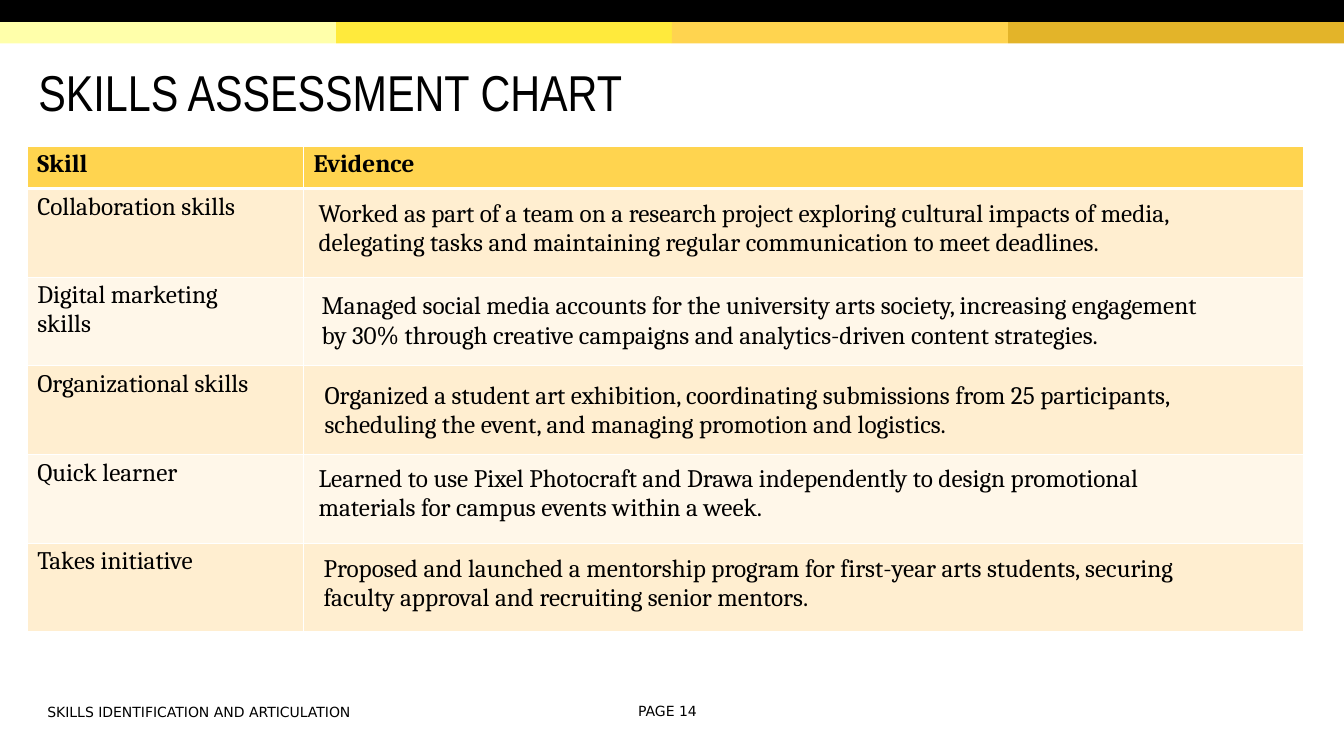
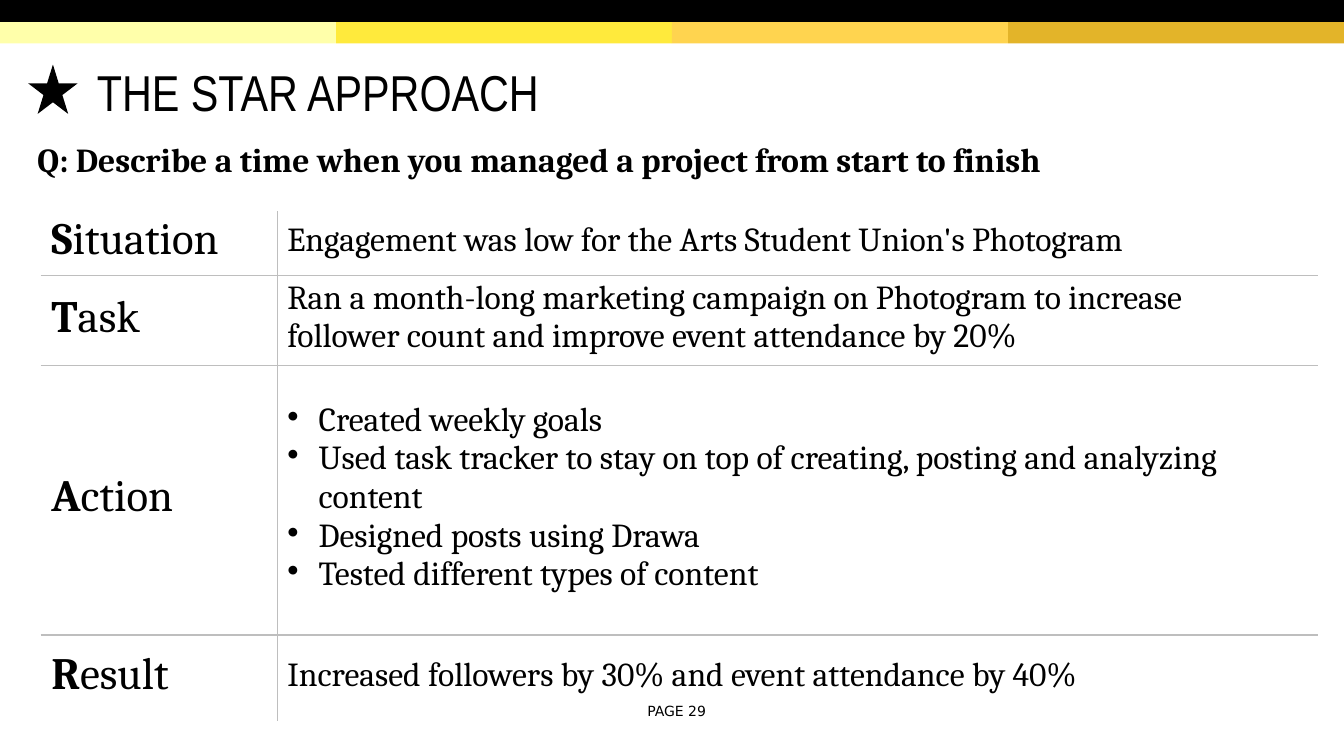
from lxml import etree
from pptx import Presentation
from pptx.dml.color import RGBColor
from pptx.enum.shapes import MSO_SHAPE
from pptx.enum.text import MSO_ANCHOR, MSO_AUTO_SIZE, PP_ALIGN
from pptx.oxml.ns import qn
from pptx.util import Inches, Pt

RECTANGLE = MSO_SHAPE.RECTANGLE
STAR = MSO_SHAPE.STAR_5_POINT
TOP, MIDDLE = MSO_ANCHOR.TOP, MSO_ANCHOR.MIDDLE
LEFT = PP_ALIGN.LEFT
NO_AUTOSIZE = MSO_AUTO_SIZE.NONE

BLACK = RGBColor(0x00, 0x00, 0x00)
WHITE = RGBColor(0xFF, 0xFF, 0xFF)
RULE_GREY = RGBColor(0xBE, 0xBE, 0xBE)
GOLD = RGBColor(0xFF, 0xD4, 0x4F)
ROW_TINTS = (RGBColor(0xFF, 0xEE, 0xD0), RGBColor(0xFF, 0xF7, 0xE9))
BAND_COLORS = (RGBColor(0xFF, 0xFF, 0xAA), RGBColor(0xFF, 0xEA, 0x3C),
               GOLD, RGBColor(0xE3, 0xB4, 0x29))

TITLE_FONT, BODY_FONT, FOOTER_FONT = "Arial Narrow", "Cambria", "DejaVu Sans"
PAGE_WIDTH, PAGE_HEIGHT = 13.33, 7.5
BAND_HEIGHT = 0.22
TITLE_BOX = (0.37, 0.6, 8.75, 0.63)
TITLE_ONLY_LAYOUT = 5

# Skill, evidence, then the evidence cell's left and top margins
SKILLS = [
    ("Collaboration skills",
     "Worked as part of a team on a research project exploring cultural "
     "impacts of media, delegating tasks and maintaining regular "
     "communication to meet deadlines.", 0.15, 0.11),
    ("Digital marketing skills",
     "Managed social media accounts for the university arts society, "
     "increasing engagement by 30% through creative campaigns and "
     "analytics-driven content strategies.", 0.18, 0.15),
    ("Organizational skills",
     "Organized a student art exhibition, coordinating submissions from 25 "
     "participants, scheduling the event, and managing promotion and "
     "logistics.", 0.21, 0.16),
    ("Quick learner",
     "Learned to use Pixel Photocraft and Drawa independently to design "
     "promotional materials for campus events within a week.", 0.15, 0.1),
    ("Takes initiative",
     "Proposed and launched a mentorship program for first-year arts "
     "students, securing faculty approval and recruiting senior mentors.",
     0.2, 0.11),
]

# Step, its lines, row height
STAR_STEPS = [
    ("Situation",
     ["Engagement was low for the Arts Student Union's Photogram"], 0.63),
    ("Task",
     ["Ran a month-long marketing campaign on Photogram to increase "
      "follower count and improve event attendance by 20%"], 0.9),
    ("Action",
     ["Created weekly goals",
      "Used task tracker to stay on top of creating, posting and analyzing "
      "content",
      "Designed posts using Drawa",
      "Tested different types of content"], 2.67),
    ("Result",
     ["Increased followers by 30% and event attendance by 40%"], 0.86),
]


def inches(box):
    return [Inches(length) for length in box]


def format_runs(para, font_name, size, bold=False):
    for run in para.runs:
        run.font.name = font_name
        run.font.size = Pt(size)
        run.font.bold = bold
        run.font.color.rgb = BLACK


def set_margins(holder, left=0, top=0, right=0, bottom=0):
    """Set the inner margins, in inches, of a text frame or a cell."""
    holder.margin_left, holder.margin_top = Inches(left), Inches(top)
    holder.margin_right, holder.margin_bottom = Inches(right), Inches(bottom)


def add_solid(page, shape_kind, box, color):
    shape = page.shapes.add_shape(shape_kind, *inches(box))
    shape.shadow.inherit = False
    shape.fill.solid()
    shape.fill.fore_color.rgb = color
    shape.line.fill.background()


def add_label(page, box, text, font_name, size, bold=False):
    frame = page.shapes.add_textbox(*inches(box)).text_frame
    frame.word_wrap = True
    set_margins(frame, top=0.01)
    frame.text = text
    format_runs(frame.paragraphs[0], font_name, size, bold)


def add_band(page):
    add_solid(page, RECTANGLE, (0, 0, PAGE_WIDTH, BAND_HEIGHT), BLACK)
    width = PAGE_WIDTH / len(BAND_COLORS)
    for index, color in enumerate(BAND_COLORS):
        box = (index * width, BAND_HEIGHT, width, BAND_HEIGHT - 0.01)
        add_solid(page, RECTANGLE, box, color)


def set_title(page, text, indent):
    title = page.shapes.title
    title.left, title.top, title.width, title.height = inches(TITLE_BOX)
    frame = title.text_frame
    frame.auto_size = NO_AUTOSIZE
    frame.vertical_anchor = TOP
    set_margins(frame, left=indent, top=0.01)
    frame.text = text
    frame.paragraphs[0].alignment = LEFT
    format_runs(frame.paragraphs[0], TITLE_FONT, 36)


def add_page(deck, title, page_number, number_left, title_indent=0.01):
    """Add a slide with the band, title and page number all slides share."""
    page = deck.slides.add_slide(deck.slide_layouts[TITLE_ONLY_LAYOUT])
    add_band(page)
    set_title(page, title, title_indent)
    add_label(page, (number_left, 6.96, 0.8, 0.2), f"PAGE {page_number}",
              FOOTER_FONT, 10)
    return page


def add_plain_table(page, left, top, widths, heights):
    box = (left, top, sum(widths), sum(heights))
    frame = page.shapes.add_table(len(heights), len(widths), *inches(box))
    table = frame.table
    table.first_row = table.horz_banding = False
    for column, width in zip(table.columns, widths):
        column.width = Inches(width)
    for row, height in zip(table.rows, heights):
        row.height = Inches(height)
    return table


def set_borders(cell, left, right, top, bottom):
    """Draw the four sides, each given as (colour, points)."""
    properties = cell._tc.get_or_add_tcPr()
    sides = zip(("a:lnL", "a:lnR", "a:lnT", "a:lnB"),
                (left, right, top, bottom))
    for index, (tag, (color, points)) in enumerate(sides):
        line = etree.Element(qn(tag), w=str(Pt(points)))
        fill = etree.SubElement(line, qn("a:solidFill"))
        etree.SubElement(fill, qn("a:srgbClr"), val=str(color))
        properties.insert(index, line)


def set_bullet(para, hanging):
    properties = para._p.get_or_add_pPr()
    properties.set("marL", str(Inches(hanging)))
    properties.set("indent", str(-Inches(hanging)))
    etree.SubElement(properties, qn("a:buChar"), char="•")


def fill_skill_row(table, row, texts, color):
    thin, thick = (WHITE, 1), (WHITE, 3)
    for column, text in enumerate(texts):
        cell = table.cell(row, column)
        cell.text = text
        format_runs(cell.text_frame.paragraphs[0], BODY_FONT, 18, row == 0)
        set_margins(cell, left=0.1, top=0.04, right=0.4)
        set_borders(cell, thin, thin, thick if row == 1 else thin,
                    thick if row == 0 else thin)
        cell.fill.solid()
        cell.fill.fore_color.rgb = color


def add_skills_table(page, left, top):
    heights = [0.42] + [0.88] * len(SKILLS)
    table = add_plain_table(page, left, top, (2.74, 9.92), heights)
    fill_skill_row(table, 0, ("Skill", "Evidence"), GOLD)
    for row, (skill, evidence, indent, drop) in enumerate(SKILLS, 1):
        fill_skill_row(table, row, (skill, evidence), ROW_TINTS[(row - 1) % 2])
        set_margins(table.cell(row, 1), left=indent, top=drop, right=0.9)


def write_step(cell, step):
    """Write the step's name with its first letter in bold."""
    para = cell.text_frame.paragraphs[0]
    for part in (step[0], step[1:]):
        para.add_run().text = part
    format_runs(para, BODY_FONT, 32)
    para.runs[0].font.bold = True


def write_lines(cell, lines):
    frame = cell.text_frame
    frame.text = "\n".join(lines)
    for para in frame.paragraphs:
        if len(lines) > 1:
            set_bullet(para, 0.31)
        format_runs(para, BODY_FONT, 24)


def add_star_table(page, left, top):
    heights = [height for _, _, height in STAR_STEPS]
    table = add_plain_table(page, left, top, (2.34, 10.32), heights)
    rule, edge = (RULE_GREY, 1), (WHITE, 1)
    last = len(STAR_STEPS) - 1
    for row, (step, lines, _) in enumerate(STAR_STEPS):
        step_cell, lines_cell = table.cell(row, 0), table.cell(row, 1)
        write_step(step_cell, step)
        write_lines(lines_cell, lines)
        above, below = (edge if row == 0 else rule,
                        edge if row == last else rule)
        set_borders(step_cell, edge, rule, above, below)
        set_borders(lines_cell, rule, edge, above, below)
        for cell, right in ((step_cell, 0), (lines_cell, 0.8)):
            cell.fill.background()
            cell.vertical_anchor = MIDDLE
            set_margins(cell, left=0.1, right=right, bottom=0.06)


def build_skills_page(deck):
    page = add_page(deck, "SKILLS ASSESSMENT CHART", 14, 6.33)
    add_skills_table(page, 0.27, 1.45)
    add_label(page, (0.47, 6.97, 3.24, 0.2),
              "SKILLS IDENTIFICATION AND ARTICULATION", FOOTER_FONT, 10)


def build_star_page(deck):
    page = add_page(deck, "THE STAR APPROACH", 29, 6.42, title_indent=0.59)
    add_solid(page, STAR, (0.28, 0.64, 0.49, 0.49), BLACK)
    add_label(page, (0.37, 1.37, 11.48, 0.43),
              "Q: Describe a time when you managed a project from start to "
              "finish", BODY_FONT, 24, bold=True)
    add_star_table(page, 0.41, 2.1)


def main():
    deck = Presentation()
    deck.slide_width, deck.slide_height = inches((PAGE_WIDTH, PAGE_HEIGHT))
    build_skills_page(deck)
    build_star_page(deck)
    deck.save("out.pptx")


if __name__ == "__main__":
    main()
